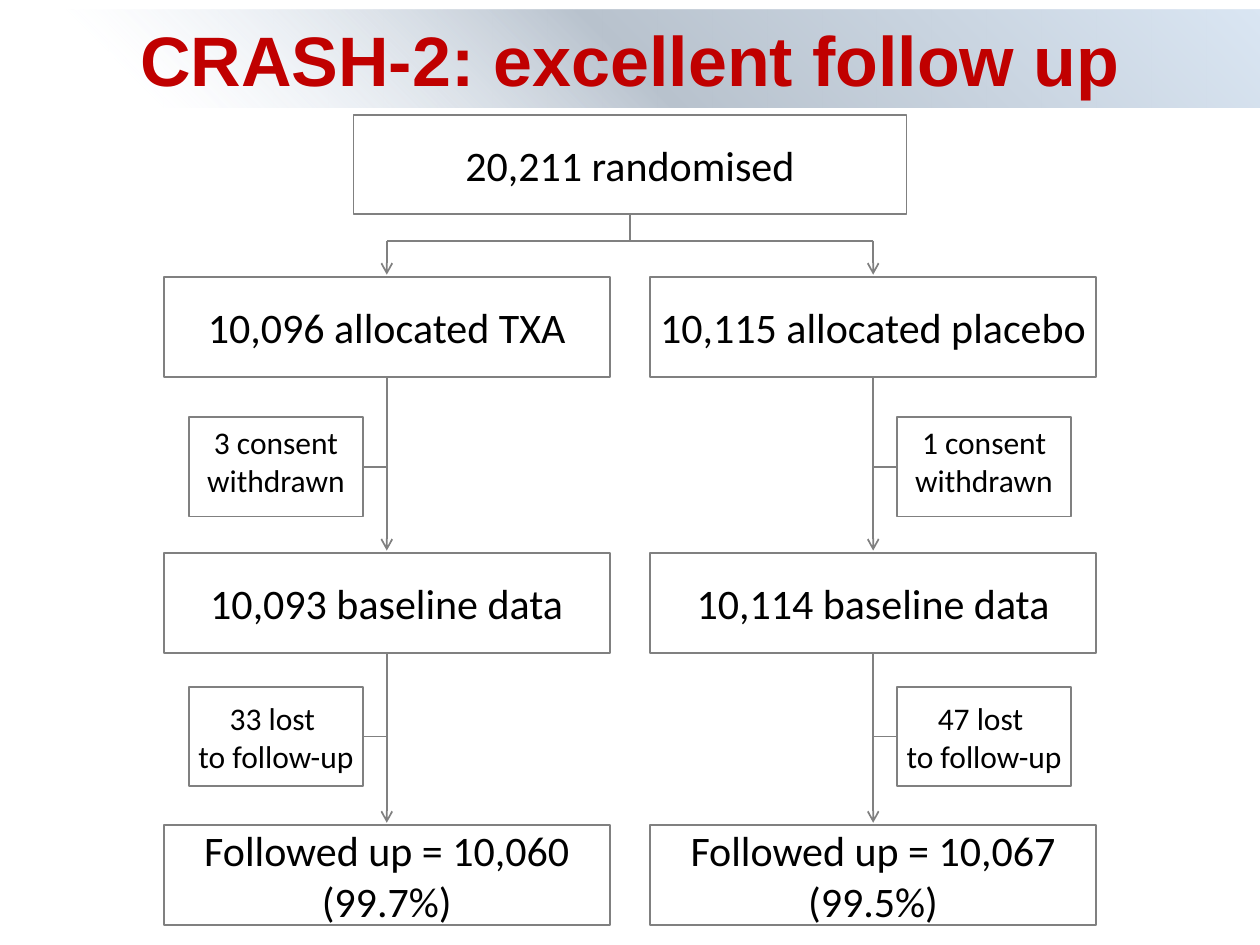
"""Build the CRASH-2 follow-up flow chart slide."""
from pptx import Presentation
from pptx.dml.color import RGBColor
from pptx.enum.shapes import MSO_CONNECTOR, MSO_SHAPE
from pptx.enum.text import MSO_ANCHOR, PP_ALIGN
from pptx.oxml import parse_xml
from pptx.oxml.ns import nsdecls
from pptx.util import Inches, Pt
from lxml import etree

RECT, STRAIGHT = MSO_SHAPE.RECTANGLE, MSO_CONNECTOR.STRAIGHT
TOP, MIDDLE, CENTER = MSO_ANCHOR.TOP, MSO_ANCHOR.MIDDLE, PP_ALIGN.CENTER

TITLE = "CRASH-2: excellent follow up"
START = "20,211 randomised"
ARMS = [
    {"stages": ["10,096 allocated TXA", "10,093 baseline data", "Followed up = 10,060 (99.7%)"],
     "losses": ["3 consent withdrawn", "33 lost \nto follow-up"]},
    {"stages": ["10,115 allocated placebo", "10,114 baseline data", "Followed up = 10,067 (99.5%)"],
     "losses": ["1 consent withdrawn", "47 lost \nto follow-up"]},
]
COLORS = {"line": "808080", "text": "000000", "title": "C00000"}
BAND = [(12, "DCE6F2", 0), (50, "B8C2CD", 100), (100, "DAE6F3", 100)]

W, H = 10, 7.5
MID = W / 2
BOX_H = 0.79
STAGE_W, START_W, LOSS_W = 3.54, 4.39, 1.38
COLUMNS = [MID - 1.93, MID + 1.93]
STAGE_ROWS = [2.2, 4.39, 6.55]
LOSS_ROWS = [(3.31, TOP), (5.45, MIDDLE)]
START_Y, FORK_Y = 0.91, 1.91
LOSS_GAP, TIP_GAP = 0.19, 0.02


def rgb(name):
    return RGBColor.from_string(COLORS[name])


def add_box(s, text, x, y, w, h, size, inset=0.08, anchor=MIDDLE,
            font="Calibri", color="text", bold=False):
    sp = s.shapes.add_shape(RECT, Inches(x), Inches(y), Inches(w), Inches(h))
    sp.shadow.inherit = False
    sp.fill.background()
    sp.line.color.rgb = rgb("line")
    sp.line.width = Pt(1)
    tf = sp.text_frame
    tf.word_wrap = True
    tf.vertical_anchor = anchor
    tf.margin_left = tf.margin_right = Inches(inset)
    tf.text = text
    for p in tf.paragraphs:
        p.alignment = CENTER
        for r in p.runs:
            r.font.name, r.font.size, r.font.bold = font, Pt(size), bold
            r.font.color.rgb = rgb(color)
    return sp


def add_line(s, x1, y1, x2, y2, arrow=False):
    c = s.shapes.add_connector(STRAIGHT, Inches(x1), Inches(y1), Inches(x2), Inches(y2))
    c.line.color.rgb = rgb("line")
    c.line.width = Pt(1)
    if arrow:
        c.line._get_or_add_ln().append(parse_xml(f'<a:tailEnd {nsdecls("a")} type="arrow"/>'))
    etree.SubElement(c._element.spPr, "{http://schemas.openxmlformats.org/drawingml/2006/main}effectLst")


def add_title(s):
    sp = add_box(s, TITLE, 0, 0.08, W, 0.77, 40, 0.1, TOP, "Arial", "title", True)
    sp.line.fill.background()
    stops = "".join(
        f'<a:gs pos="{pos * 1000}"><a:srgbClr val="{color}">'
        f'<a:alpha val="{alpha * 1000}"/></a:srgbClr></a:gs>' for pos, color, alpha in BAND)
    grad = parse_xml(f'<a:gradFill {nsdecls("a")} rotWithShape="1"><a:gsLst>{stops}</a:gsLst>'
                     f'<a:lin ang="{315 * 60000}" scaled="0"/></a:gradFill>')
    props = sp._element.spPr
    props.replace(props.find("{*}noFill"), grad)


def add_arm(s, arm, x, side):
    for text, y in zip(arm["stages"], STAGE_ROWS):
        add_box(s, text, x - STAGE_W / 2, y, STAGE_W, BOX_H, 24)
    add_line(s, x, FORK_Y, x, STAGE_ROWS[0] - TIP_GAP, True)
    for y, below in zip(STAGE_ROWS, STAGE_ROWS[1:]):
        add_line(s, x, y + BOX_H, x, below - TIP_GAP, True)
    edge = x + side * LOSS_GAP
    left = edge if side > 0 else edge - LOSS_W
    for text, (y, anchor) in zip(arm["losses"], LOSS_ROWS):
        add_box(s, text, left, y, LOSS_W, BOX_H, 18, 0.04, anchor)
        add_line(s, x, y + BOX_H / 2, edge, y + BOX_H / 2)


def main():
    prs = Presentation()
    prs.slide_width, prs.slide_height = Inches(W), Inches(H)
    s = prs.slides.add_slide(prs.slide_layouts[6])
    add_title(s)
    add_box(s, START, MID - START_W / 2, START_Y, START_W, BOX_H, 24)
    add_line(s, MID, START_Y + BOX_H, MID, FORK_Y)
    add_line(s, COLUMNS[0], FORK_Y, COLUMNS[1], FORK_Y)
    for arm, x, side in zip(ARMS, COLUMNS, (-1, 1)):
        add_arm(s, arm, x, side)
    prs.save("out.pptx")


if __name__ == "__main__":
    main()
